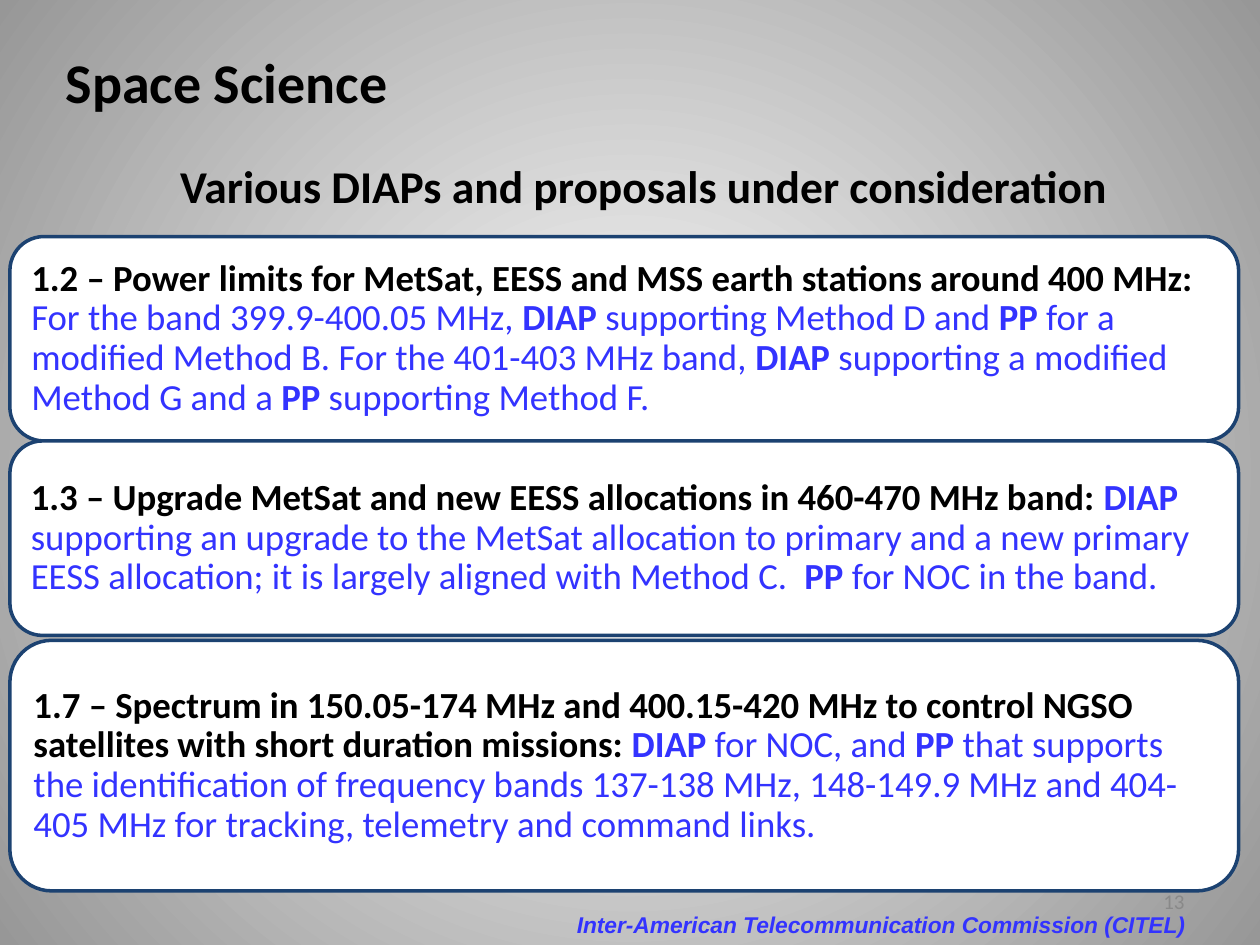
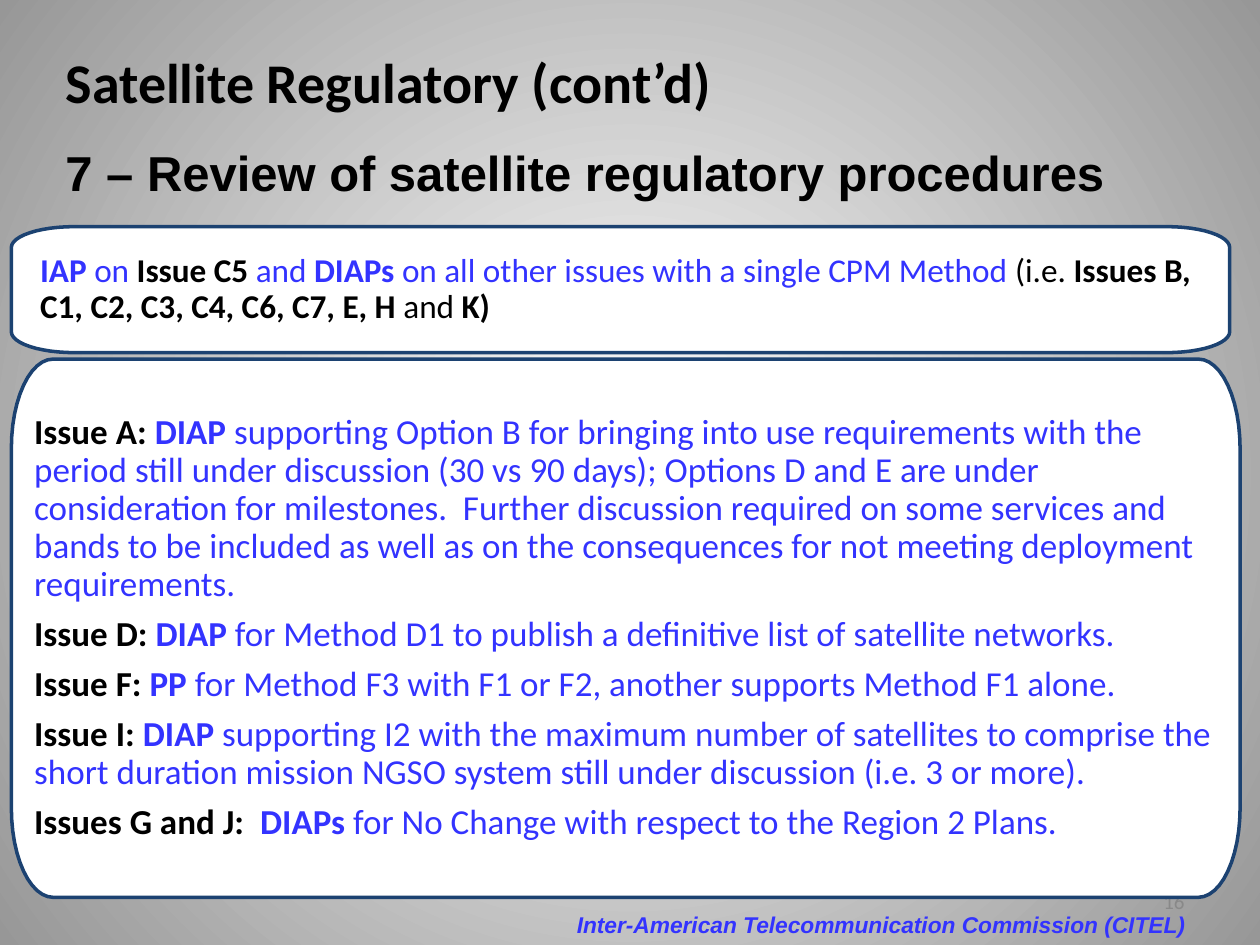
from math import cos, pi, sin

from lxml import etree
from pptx import Presentation
from pptx.dml.color import RGBColor
from pptx.enum.shapes import MSO_SHAPE
from pptx.enum.text import MSO_ANCHOR as Anchor, MSO_AUTO_SIZE as AutoSize, PP_ALIGN as Align
from pptx.oxml.ns import qn
from pptx.util import Cm, Pt

BLACK, BLUE, NAVY, WHITE, GREY, EDGE = "000000", "3333FF", "1C4271", "FFFFFF", "898989", "979797"
LABEL, KEY, BODY, NOTE = (BLACK, True), (BLUE, True), (BLUE, False), (BLACK, False)

SCIENCE_ITEMS = [
    ((0.2, 4.77, 24.77, 4.12), [
        ("1.2 – Power limits for MetSat, EESS and MSS earth stations around 400 MHz: ", LABEL),
        ("For the band 399.9-400.05 MHz, ", BODY), ("DIAP", KEY),
        (" supporting Method D and ", BODY), ("PP", KEY),
        (" for a modified Method B. For the 401-403 MHz band, ", BODY), ("DIAP", KEY),
        (" supporting a modified Method G and a ", BODY), ("PP", KEY),
        (" supporting Method F.", BODY)]),
    ((0.2, 8.89, 24.77, 3.92), [
        ("1.3 – Upgrade MetSat and new EESS allocations in 460-470 MHz band: ", LABEL),
        ("DIAP ", KEY),
        ("supporting an upgrade to the MetSat allocation to primary and a new primary "
         "EESS allocation; it is largely aligned with Method C.  ", BODY),
        ("PP", KEY), (" for NOC in the band.", BODY)]),
    ((0.2, 12.91, 24.77, 5.05), [
        ("1.7 – Spectrum in 150.05-174 MHz and 400.15-420 MHz to control NGSO "
         "satellites with short duration missions: ", LABEL),
        ("DIAP", KEY), (" for NOC, and ", BODY), ("PP", KEY),
        (" that supports the identification of frequency bands 137-138 MHz, 148-149.9 MHz "
         "and 404-405 MHz for tracking, telemetry and command links.", BODY)]),
]

SINGLE_METHOD = [[
    ("IAP ", KEY), ("on ", BODY), ("Issue C5 ", LABEL), ("and", BODY), (" DIAPs ", KEY),
    ("on all other issues with a single CPM Method ", BODY), ("(i.e. ", NOTE),
    ("Issues B, C1, C2, C3, C4, C6, C7, E, H ", LABEL), ("and", NOTE), (" K)", LABEL)]]

OPEN_ISSUES = [
    [("Issue A: ", LABEL), ("DIAP ", KEY),
     ("supporting Option B for bringing into use requirements with the period still under "
      "discussion (30 vs 90 days); Options D and E are under consideration for milestones.  "
      "Further discussion required on some services and bands to be included as well as on "
      "the consequences for not meeting deployment requirements.", BODY)],
    [("Issue D: ", LABEL), ("DIAP ", KEY),
     ("for Method D1 to publish a definitive list of satellite networks.", BODY)],
    [("Issue F:", LABEL), (" PP ", KEY),
     ("for Method F3 with F1 or F2, another supports Method F1 alone.", BODY)],
    [("Issue I: ", LABEL), ("DIAP", KEY),
     (" supporting I2 with the maximum number of satellites to comprise the short duration "
      "mission NGSO system still under discussion (i.e. 3 or more).", BODY)],
    [("Issues G and J:  ", LABEL), ("DIAPs", KEY),
     (" for No Change with respect to the Region 2 Plans.", BODY)],
]


def rgb(value):
    """Turn a hex string into a colour."""
    return RGBColor.from_string(value)


def set_font(font, size, colour, name="Calibri", bold=False, italic=False):
    """Set every property of a font that the deck uses."""
    font.size, font.name, font.bold, font.italic = Pt(size), name, bold, italic
    font.color.rgb = rgb(colour)


def paint_background(master):
    """Give the master its radial white-to-grey gradient."""
    fill = master.background.fill
    fill.gradient()
    for stop, colour in zip(fill.gradient_stops, (WHITE, EDGE)):
        stop.color.rgb = rgb(colour)
    gradient = next(master.element.iter(qn("a:gradFill")))
    for linear in gradient.findall(qn("a:lin")):
        gradient.remove(linear)
    circle = etree.SubElement(gradient, qn("a:path"), {"path": "circle"})
    etree.SubElement(circle, qn("a:fillToRect"), dict.fromkeys("ltrb", "50000"))


def add_line(slide, box, text, size, colour, align=Align.LEFT, anchor=Anchor.TOP,
             wrap=True, **style):
    """Add a one-line text box."""
    frame = slide.shapes.add_textbox(*map(Cm, box)).text_frame
    frame.word_wrap, frame.vertical_anchor = wrap, anchor
    line = frame.paragraphs[0]
    line.text, line.alignment = text, align
    set_font(line.font, size, colour, **style)


def add_base(prs, heading, number):
    """Start a slide with its title, footer and page number."""
    slide = prs.slides.add_slide(prs.slide_layouts[5])
    title = slide.shapes.title
    title.left, title.top, title.width, title.height = map(Cm, (1.07, 0.84, 13.54, 1.63))
    frame = title.text_frame
    frame.text, frame.vertical_anchor, frame.auto_size = heading, Anchor.TOP, AutoSize.NONE
    frame.paragraphs[0].alignment = Align.LEFT
    set_font(frame.paragraphs[0].font, 32, BLACK, bold=True)
    add_line(slide, (8.05, 18.24, 16.08, 0.81),
             "Inter-American Telecommunication Commission (CITEL)", 13, BLUE,
             Align.RIGHT, name="Arial", bold=True, italic=True)
    add_line(slide, (18.21, 17.65, 5.92, 1.02), number, 12, GREY, Align.RIGHT, Anchor.MIDDLE)
    return slide


def fill_panel(panel, paragraphs, size, inset):
    """Style a white panel and write its mixed-colour paragraphs."""
    panel.shadow.inherit = False
    panel.fill.solid()
    panel.fill.fore_color.rgb = rgb(WHITE)
    panel.line.color.rgb, panel.line.width = rgb(NAVY), Pt(2)
    frame = panel.text_frame
    frame.word_wrap, frame.vertical_anchor = True, Anchor.MIDDLE
    frame.margin_left = frame.margin_right = frame.margin_top = frame.margin_bottom = Cm(inset)
    for index, runs in enumerate(paragraphs):
        paragraph = frame.add_paragraph() if index else frame.paragraphs[0]
        paragraph.alignment, paragraph.line_spacing = Align.LEFT, 0.9
        paragraph.space_after = Pt(7)
        paragraph.font.size, paragraph.font.name = Pt(size), "Calibri"
        for text, (colour, bold) in runs:
            run = paragraph.add_run()
            run.text, run.font.bold = text, bold
            run.font.color.rgb = rgb(colour)


def add_oval_cornered(slide, box, radius_x, radius_y, steps=12):
    """Draw a box whose corners are quarter ellipses."""
    left, top, width, height = box
    centres = [(left + width - radius_x, top + height - radius_y),
               (left + radius_x, top + height - radius_y),
               (left + radius_x, top + radius_y),
               (left + width - radius_x, top + radius_y)]
    points = []
    for quarter, (x, y) in enumerate(centres):
        for step in range(steps + 1):
            angle = (quarter + step / steps) * pi / 2
            points.append((Cm(x + radius_x * cos(angle)), Cm(y + radius_y * sin(angle))))
    outline = slide.shapes.build_freeform(*points[0])
    outline.add_line_segments(points[1:], close=True)
    return outline.convert_to_shape()


def build_science(prs):
    """Build the space science slide."""
    slide = add_base(prs, "Space Science", "13")
    for box, runs in SCIENCE_ITEMS:
        panel = slide.shapes.add_shape(MSO_SHAPE.ROUNDED_RECTANGLE, *map(Cm, box))
        fill_panel(panel, [runs], 21, 0.23)
    add_line(slide, (3.38, 3.07, 19.66, 1.37),
             "Various DIAPs and proposals under consideration", 26, BLACK, bold=True)


def build_regulatory(prs):
    """Build the satellite regulatory slide."""
    slide = add_base(prs, "Satellite Regulatory (cont’d)", "16")
    summary = add_oval_cornered(slide, (0.23, 4.57, 24.56, 2.54), 1.27, 0.42)
    fill_panel(summary, SINGLE_METHOD, 19, 0.58)
    issues = add_oval_cornered(slide, (0.23, 7.24, 24.77, 10.85), 0.84, 1.8)
    fill_panel(issues, OPEN_ISSUES, 20, 0.46)
    add_line(slide, (1.07, 2.74, 22.23, 1.45), "7 – Review of satellite regulatory procedures",
             28, BLACK, wrap=False, name="Arial", bold=True)


def main():
    """Build and save the deck."""
    prs = Presentation()
    prs.slide_width, prs.slide_height = Cm(25.4), Cm(19.05)
    paint_background(prs.slide_master)
    build_science(prs)
    build_regulatory(prs)
    prs.save("out.pptx")


if __name__ == "__main__":
    main()
